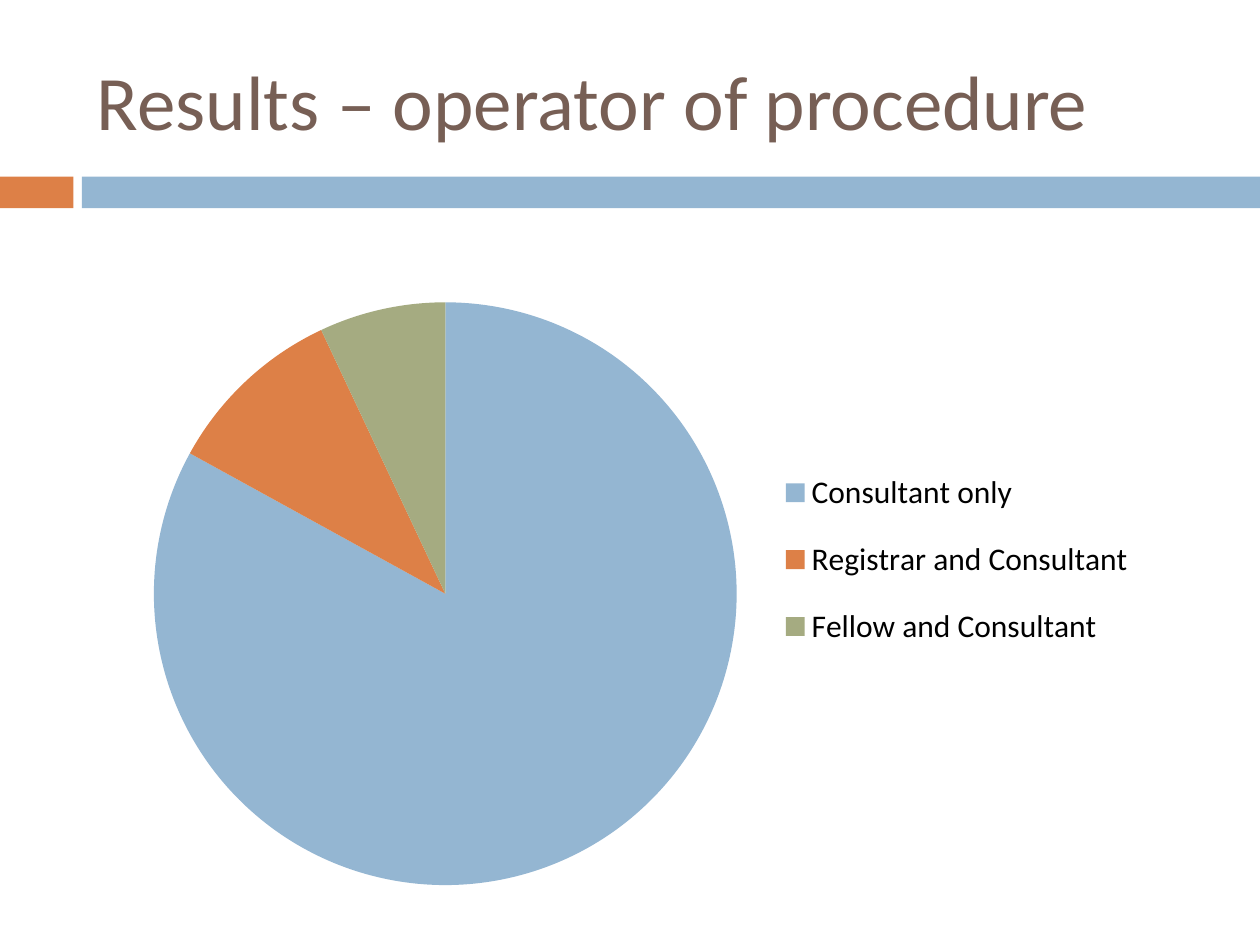
from lxml import etree
from pptx import Presentation
from pptx import util as u
from pptx.chart.data import CategoryChartData
from pptx.dml.color import RGBColor
from pptx.enum import chart as charts, shapes, text
from pptx.oxml.ns import qn

COLORS = {"blue": "94B6D2", "orange": "DD8047", "green": "A5AB81",
          "title": "775F55", "legend": "000000"}
FONT = "Calibri"
SHARES = {"Consultant only": (83, "blue"),
          "Registrar and Consultant": (10, "orange"),
          "Fellow and Consultant": (7, "green")}


def color(name):
    """Return the named colour."""
    return RGBColor.from_string(COLORS[name])


def style_font(font, size, color_name):
    """Set the typeface, size and colour of a font."""
    font.name, font.size = FONT, u.Pt(size)
    font.color.rgb = color(color_name)


def add_title(slide, left, top, width, height):
    """Place and format the slide title."""
    title = slide.shapes.title
    title.left, title.top, title.width, title.height = left, top, width, height
    frame = title.text_frame
    frame.text = "Results – operator of procedure"
    frame.word_wrap = True
    frame.auto_size = text.MSO_AUTO_SIZE.NONE
    frame.vertical_anchor = text.MSO_ANCHOR.MIDDLE
    paragraph = frame.paragraphs[0]
    paragraph.alignment = text.PP_ALIGN.LEFT
    style_font(paragraph.font, 44, "title")


def add_band(slide, left, top, width, height):
    """Draw the two-part band under the title."""
    accent, gap = u.Cm(1.48), u.Cm(0.17)
    start = accent + gap
    for offset, length, name in ((0, accent, "orange"), (start, width - start, "blue")):
        bar = slide.shapes.add_shape(shapes.MSO_SHAPE.RECTANGLE,
                                     left + offset, top, length, height)
        bar.shadow.inherit = False
        bar.fill.solid()
        bar.fill.fore_color.rgb = color(name)
        bar.line.fill.background()


def set_layout(parent, index, **fractions):
    """Give a chart part a manual layout in fractions of the chart."""
    for old in parent.findall(qn("c:layout")):
        parent.remove(old)
    layout = etree.Element(qn("c:layout"))
    manual = etree.SubElement(layout, qn("c:manualLayout"))
    if parent.tag == qn("c:plotArea"):
        etree.SubElement(manual, qn("c:layoutTarget"), val="inner")
    for mode in ("xMode", "yMode"):
        etree.SubElement(manual, qn(f"c:{mode}"), val="edge")
    for key, value in fractions.items():
        etree.SubElement(manual, qn(f"c:{key}"), val=str(value))
    parent.insert(index, layout)


def add_pie(slide, left, top, width, height):
    """Add the pie of operators with its legend."""
    data = CategoryChartData()
    data.categories = list(SHARES)
    data.add_series("Series 1", [value for value, _ in SHARES.values()])
    chart = slide.shapes.add_chart(charts.XL_CHART_TYPE.PIE, left, top,
                                   width, height, data).chart
    chart.has_title = False
    chart.has_legend = True
    chart.legend.position = charts.XL_LEGEND_POSITION.RIGHT
    chart.legend.include_in_layout = False
    style_font(chart.font, 18, "legend")
    plot = chart.plots[0]
    plot.vary_by_categories = True
    for index, (_, name) in enumerate(SHARES.values()):
        point = plot.series[0].points[index].format
        point.fill.solid()
        point.fill.fore_color.rgb = color(name)
        point.line.fill.background()
    plot_area = chart.element.find(".//" + qn("c:plotArea"))
    legend = chart.element.find(".//" + qn("c:legend"))
    set_layout(plot_area, 0, x=0.07, y=0.03, w=0.52, h=0.94)
    set_layout(legend, 1, x=0.62, y=0.26, w=0.33, h=0.37)


def main():
    """Build the slide and save it."""
    presentation = Presentation()
    presentation.slide_width, presentation.slide_height = u.Cm(25.4), u.Cm(19.05)
    slide = presentation.slides.add_slide(presentation.slide_layouts[5])
    add_band(slide, 0, u.Cm(3.56), presentation.slide_width, u.Cm(0.64))
    add_title(slide, u.Cm(1.7), u.Cm(0.64), u.Cm(22.66), u.Cm(2.74))
    add_pie(slide, u.Cm(1.5), u.Cm(5.72), u.Cm(22.66), u.Cm(12.5))
    presentation.save("out.pptx")


if __name__ == "__main__":
    main()
